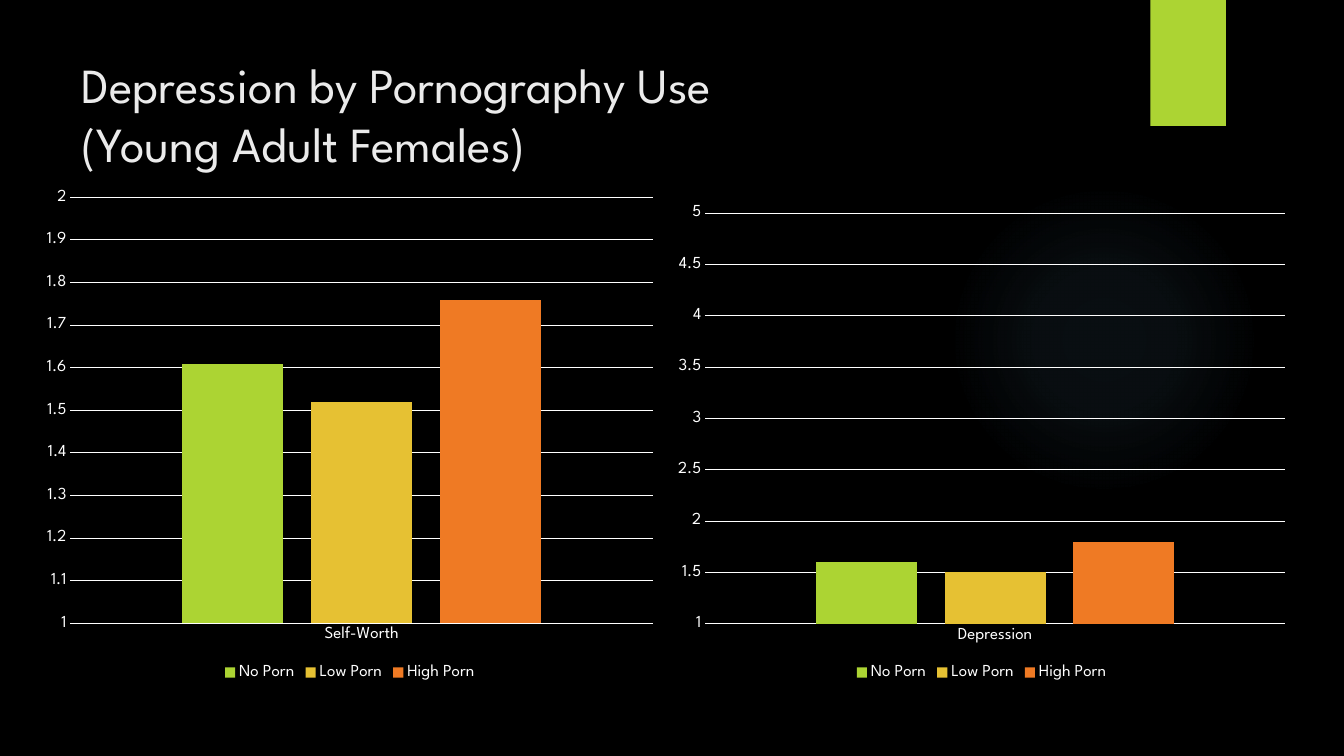
from lxml import etree
from pptx import Presentation
from pptx.chart.data import CategoryChartData
from pptx.dml.color import RGBColor
from pptx.enum.chart import XL_CHART_TYPE, XL_LEGEND_POSITION, XL_TICK_MARK
from pptx.enum.shapes import MSO_SHAPE
from pptx.enum.text import MSO_ANCHOR
from pptx.oxml.ns import qn
from pptx.util import Inches, Pt

COLUMNS = XL_CHART_TYPE.COLUMN_CLUSTERED
BOTTOM = XL_LEGEND_POSITION.BOTTOM
NO_TICK = XL_TICK_MARK.NONE
RECTANGLE, OVAL = MSO_SHAPE.RECTANGLE, MSO_SHAPE.OVAL
TOP = MSO_ANCHOR.TOP
FONT = "League Spartan"
WHITE, LIME = "FFFFFF", "ACD433"

# Content
TITLE = "Depression by Pornography Use\v(Young Adult Females)"
GROUPS = [("No Porn", LIME), ("Low Porn", "E6C133"), ("High Porn", "EF7A24")]
CHARTS = [  # category, values by group, place, axis maximum, axis step
    ("Self-Worth", (1.61, 1.52, 1.76), (0.34, 1.78, 6.26, 5.01), 2, 0.1),
    ("Depression", (1.6, 1.5, 1.8), (6.6, 1.94, 6.27, 4.85), 5, 0.5),
]
GLOW_COLOR = "7AC4F0"
GLOW_STOPS = [(0, 7), (36, 6), (69, 0)]  # position and opacity, percent


def color(code):
    return RGBColor.from_string(code)


def inches(place):
    return [Inches(value) for value in place]


def style_font(font, size, code):
    font.name = FONT
    font.size = Pt(size)
    font.color.rgb = color(code)


def style_line(line, code):
    line.color.rgb = color(code)
    line.width = Pt(0.75)


def add_plain_shape(page, kind, place, code):
    shape = page.shapes.add_shape(kind, *inches(place))
    shape.shadow.inherit = False
    shape.fill.solid()
    shape.fill.fore_color.rgb = color(code)
    shape.line.fill.background()
    return shape


def add_glow(page):
    glow = add_plain_shape(page, OVAL, (9.41, 1.83, 3.08, 3.08), GLOW_COLOR)
    gradient = etree.Element(qn("a:gradFill"), rotWithShape="1")
    stops = etree.SubElement(gradient, qn("a:gsLst"))
    for position, opacity in GLOW_STOPS:
        stop = etree.SubElement(stops, qn("a:gs"), pos=str(position * 1000))
        tint = etree.SubElement(stop, qn("a:srgbClr"), val=GLOW_COLOR)
        etree.SubElement(tint, qn("a:alpha"), val=str(opacity * 1000))
    circle = etree.SubElement(gradient, qn("a:path"), {"path": "circle"})
    center = {side: "50000" for side in "ltrb"}
    etree.SubElement(circle, qn("a:fillToRect"), center)
    properties = glow._element.spPr
    properties.replace(properties.find(qn("a:solidFill")), gradient)


def add_title(page):
    box = page.shapes.add_textbox(*inches((0.71, 0.49, 10.29, 0.96)))
    frame = box.text_frame
    frame.word_wrap = True
    frame.vertical_anchor = TOP
    frame.text = TITLE
    style_font(frame.paragraphs[0].font, 35, "EBEBEB")


def add_column_chart(page, category, group_values, place, maximum, step):
    data = CategoryChartData()
    data.categories = [category]
    for (name, _), value in zip(GROUPS, group_values):
        data.add_series(name, [value])
    chart = page.shapes.add_chart(COLUMNS, *inches(place), data).chart
    style_font(chart.font, 10, WHITE)
    chart.has_title = False
    chart.has_legend = True
    chart.legend.position = BOTTOM
    chart.legend.include_in_layout = False
    style_font(chart.legend.font, 12, WHITE)

    # Columns
    plot = chart.plots[0]
    plot.gap_width = 219
    plot.overlap = -27
    plot.vary_by_categories = False
    for series, (_, code) in zip(plot.series, GROUPS):
        series.format.fill.solid()
        series.format.fill.fore_color.rgb = color(code)

    # Axes
    for axis in (chart.category_axis, chart.value_axis):
        axis.major_tick_mark = NO_TICK
        axis.minor_tick_mark = NO_TICK
        style_font(axis.tick_labels.font, 12, WHITE)
    style_line(chart.category_axis.format.line, WHITE)
    scale = chart.value_axis
    scale.minimum_scale = 1
    scale.maximum_scale = maximum
    scale.major_unit = step
    scale.format.line.fill.background()
    scale.has_major_gridlines = True
    style_line(scale.major_gridlines.format.line, WHITE)


def main():
    deck = Presentation()
    deck.slide_width, deck.slide_height = Inches(13.33), Inches(7.5)
    page = deck.slides.add_slide(deck.slide_layouts[6])
    page.background.fill.solid()
    page.background.fill.fore_color.rgb = color("000000")

    # Backdrop, title and charts
    add_glow(page)
    add_plain_shape(page, RECTANGLE, (11.41, 0, 0.75, 1.25), LIME)
    add_title(page)
    for chart in CHARTS:
        add_column_chart(page, *chart)
    deck.save("out.pptx")


if __name__ == "__main__":
    main()
